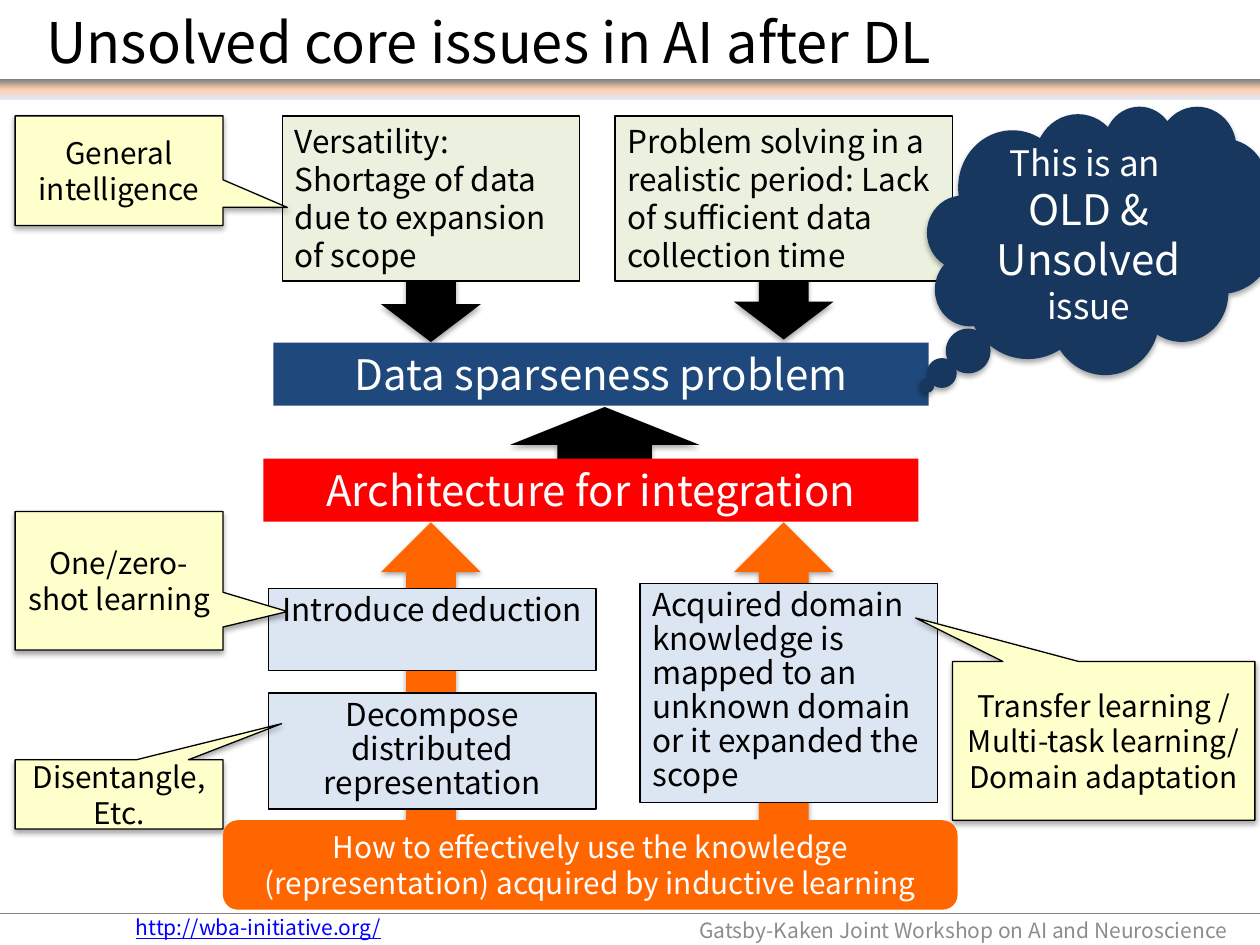
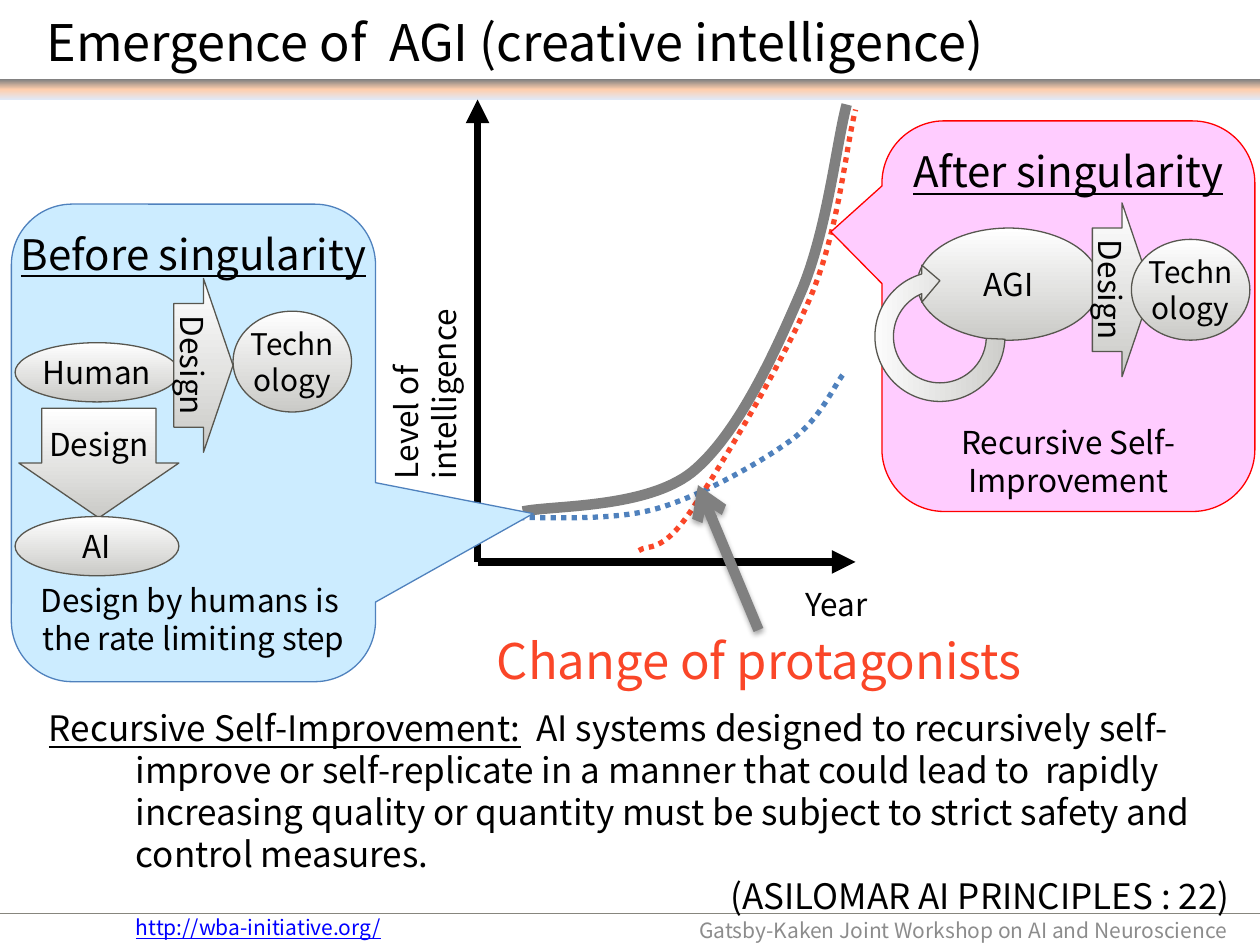
from lxml.etree import SubElement
from pptx import Presentation
from pptx.dml.color import RGBColor
from pptx.enum.dml import MSO_LINE
from pptx.enum.shapes import MSO_CONNECTOR, MSO_SHAPE
from pptx.enum.text import MSO_ANCHOR, PP_ALIGN
from pptx.oxml.ns import qn
from pptx.util import Pt

PX = 9144  # 100 px to the inch
FONT = "Noto Sans CJK JP"

BLACK = RGBColor(0x00, 0x00, 0x00)
WHITE = RGBColor(0xFF, 0xFF, 0xFF)
GRAY = RGBColor(0x80, 0x80, 0x80)
FOOTER_GRAY = RGBColor(0x8C, 0x8C, 0x8C)
FOOTER_LINE = RGBColor(0x87, 0x86, 0x7E)
LINK_BLUE = RGBColor(0x00, 0x00, 0xFF)
ORANGE = RGBColor(0xFF, 0x66, 0x00)
RED = RGBColor(0xFF, 0x00, 0x00)
TOMATO = RGBColor(0xFA, 0x46, 0x28)
NAVY = RGBColor(0x1F, 0x49, 0x7D)
CLOUD_NAVY = RGBColor(0x17, 0x37, 0x5E)
CURVE_BLUE = RGBColor(0x4F, 0x81, 0xBD)
PALE_GREEN = RGBColor(0xEB, 0xF1, 0xDE)
PALE_BLUE = RGBColor(0xDC, 0xE6, 0xF2)
PALE_YELLOW = RGBColor(0xFF, 0xFF, 0xCC)
SKY = RGBColor(0xCC, 0xEC, 0xFF)
PINK = RGBColor(0xFF, 0xCC, 0xFF)
METAL_LINE = RGBColor(0x57, 0x56, 0x4F)
METAL = [(0, WHITE), (100, RGBColor(0xCA, 0xCA, 0xC7))]
BAND = [(0, GRAY), (50, RGBColor(0xFF, 0xCE, 0xAC)),
        (100, RGBColor(0xE1, 0xE8, 0xF5))]


def write(shape, text, size=18, color=BLACK, align=PP_ALIGN.CENTER, underline=False,
          line_spacing=None, space_before=0, hanging=0):
    """Add one paragraph for each line of the text, and return the last."""
    frame = shape.text_frame
    for line in text.split("\n"):
        paragraph = frame.paragraphs[-1]
        if paragraph.runs:
            paragraph = frame.add_paragraph()
            paragraph.space_before = Pt(space_before)
        paragraph.alignment = align
        if line_spacing:
            paragraph.line_spacing = line_spacing
        if hanging:
            properties = paragraph._p.get_or_add_pPr()
            properties.set("marL", str(hanging * PX))
            properties.set("indent", str(-hanging * PX))
        run = paragraph.add_run()
        run.text = line
        run.font.name = FONT
        run.font.size = Pt(size)
        run.font.color.rgb = color
        run.font.underline = underline
    return paragraph


def set_gradient(shape, stops):
    """Fill from top to bottom with (percent, colour) stops."""
    shape.fill.gradient()
    shape.fill.gradient_angle = 270
    stop_list = shape._element.spPr.find(".//" + qn("a:gsLst"))
    for stop in list(stop_list):
        stop_list.remove(stop)
    for percent, color in stops:
        stop = SubElement(stop_list, qn("a:gs"), pos=str(percent * 1000))
        SubElement(stop, qn("a:srgbClr"), val=str(color))


def set_effects(shape, shadow):
    """Leave an empty effect list, or one soft shadow below the shape."""
    properties = shape._element.spPr
    effects = properties.find(qn("a:effectLst"))
    if effects is None:
        effects = SubElement(properties, qn("a:effectLst"))
    if shadow:
        outer = SubElement(effects, qn("a:outerShdw"), blurRad="40000", dist="23000",
                           dir="5400000", rotWithShape="0")
        color = SubElement(outer, qn("a:srgbClr"), val="000000")
        SubElement(color, qn("a:alpha"), val="35000")


class Deck:
    """Holds the shared style and the slide being filled."""

    def __init__(self):
        self.presentation = Presentation()
        self.presentation.slide_width = 1000 * PX
        self.presentation.slide_height = 750 * PX
        self.slide = None

    def new_slide(self):
        self.slide = self.presentation.slides.add_slide(self.presentation.slide_layouts[6])
        self.shape(MSO_SHAPE.RECTANGLE, (0, 63, 1000, 16), BAND)
        self.line((0, 725), (1000, 725), FOOTER_LINE, 1)
        self.text((98, 721, 224, 30), "http://wba-initiative.org/", wrap=False,
                  anchor=MSO_ANCHOR.TOP, size=12, color=LINK_BLUE,
                  align=PP_ALIGN.LEFT, underline=True)
        self.text((428, 726, 560, 24), "Gatsby-Kaken Joint Workshop on AI and Neuroscience ",
                  size=12, color=FOOTER_GRAY, align=PP_ALIGN.RIGHT)

    def title(self, text, size):
        self.text((27, 1, 882, 64), text, size=size, align=PP_ALIGN.LEFT)

    def set_frame(self, shape, anchor, wrap, margins=(10, 5)):
        frame = shape.text_frame
        frame.vertical_anchor = anchor
        frame.word_wrap = wrap
        frame.margin_left = frame.margin_right = margins[0] * PX
        frame.margin_top = frame.margin_bottom = margins[1] * PX

    def text(self, box, text="", anchor=MSO_ANCHOR.MIDDLE, wrap=True, rotation=0, **style):
        shape = self.slide.shapes.add_textbox(*(length * PX for length in box))
        shape.rotation = rotation
        self.set_frame(shape, anchor, wrap)
        if text:
            write(shape, text, **style)
        return shape

    def shape(self, kind, box, fill, line=None, text="", adjustments=(), rotation=0,
              shadow=False, anchor=MSO_ANCHOR.MIDDLE, wrap=True, margins=(10, 5), **style):
        shape = self.slide.shapes.add_shape(kind, *(length * PX for length in box))
        shape.rotation = rotation
        for index, value in enumerate(adjustments):
            shape.adjustments[index] = value
        if isinstance(fill, list):
            set_gradient(shape, fill)
        else:
            shape.fill.solid()
            shape.fill.fore_color.rgb = fill
        if line is None:
            shape.line.fill.background()
        else:
            shape.line.color.rgb = line
            shape.line.width = Pt(0.75)
        shape.shadow.inherit = False
        set_effects(shape, shadow)
        self.set_frame(shape, anchor, wrap, margins)
        if text:
            write(shape, text, **style)
        return shape

    def box(self, box, fill, text, line=BLACK, **style):
        self.shape(MSO_SHAPE.RECTANGLE, box, fill, line, text, anchor=MSO_ANCHOR.TOP, **style)

    def block_arrow(self, box, fill, rotation):
        self.shape(MSO_SHAPE.RIGHT_ARROW, box, fill, rotation=rotation, shadow=True)

    def note(self, box, tip, text):
        self.shape(MSO_SHAPE.RECTANGULAR_CALLOUT, box, PALE_YELLOW, BLACK, text,
                   adjustments=tip, shadow=True, size=17)

    def balloon(self, box, fill, line, tip, heading, **frame):
        return self.shape(MSO_SHAPE.ROUNDED_RECTANGULAR_CALLOUT, box, fill, line, heading,
                          adjustments=(*tip, 0.167), anchor=MSO_ANCHOR.TOP, size=24,
                          underline=True, **frame)

    def metal(self, kind, box, text="", wrap=False, **options):
        return self.shape(kind, box, METAL, METAL_LINE, text, wrap=wrap, **options)

    def design_arrow(self, left, top):
        shape = self.metal(MSO_SHAPE.RIGHT_ARROW, (left, top, 47, 138), "Design",
                           adjustments=(0.711, 0.5))
        shape.text_frame._txBody.bodyPr.set("vert", "vert")

    def technology(self, left, top):
        self.metal(MSO_SHAPE.OVAL, (left, top, 94, 80), "Technology", wrap=True,
                   margins=(0, 0), size=17)

    def line(self, start, end, color, width, head=None, shadow=False):
        connector = self.slide.shapes.add_connector(
            MSO_CONNECTOR.STRAIGHT, *(length * PX for length in (*start, *end)))
        connector.line.color.rgb = color
        connector.line.width = Pt(width)
        if head:
            SubElement(connector.line._get_or_add_ln(), qn("a:tailEnd"), type=head)
        set_effects(connector, shadow)

    def curve(self, points, color, width, dash=None):
        """Draw a start point followed by Bézier segments of three points each."""
        builder = self.slide.shapes.build_freeform(*points[0], scale=PX)
        builder.add_line_segments(points[1:], close=False)
        shape = builder.convert_to_shape()
        outline = shape._element.spPr.find(".//" + qn("a:path"))
        segments = outline.findall(qn("a:lnTo"))
        for index in range(0, len(segments), 3):
            bezier = SubElement(outline, qn("a:cubicBezTo"))
            for segment in segments[index:index + 3]:
                bezier.append(segment[0])
                outline.remove(segment)
        shape.fill.background()
        shape.line.color.rgb = color
        shape.line.width = Pt(width)
        if dash:
            shape.line.dash_style = dash
        shape.shadow.inherit = False


def build_issues(deck):
    deck.new_slide()
    # Block arrows behind the boxes
    deck.block_arrow((220, 497, 244, 79), ORANGE, 270)
    deck.block_arrow((492, 505, 260, 79), ORANGE, 270)
    deck.block_arrow((312, 202, 60, 79), BLACK, 90)
    deck.block_arrow((592, 200, 60, 79), BLACK, 90)
    deck.title("Unsolved core issues in AI after DL", 32)

    # Causes and approaches
    left = PP_ALIGN.LEFT
    deck.box((224, 92, 236, 131), PALE_GREEN,
             "Versatility: Shortage of data due to expansion of scope", align=left)
    deck.box((488, 92, 268, 131), PALE_GREEN,
             "Problem solving in a realistic period: Lack of sufficient data collection time",
             align=left)
    deck.box((213, 467, 260, 65), PALE_BLUE, "Introduce deduction", line_spacing=0.9)
    deck.box((213, 550, 260, 92), PALE_BLUE, "Decompose distributed representation",
             line_spacing=0.9)
    deck.box((508, 463, 236, 174), PALE_BLUE,
             "Acquired domain knowledge is mapped to an unknown domain or it expanded the scope",
             align=left, line_spacing=0.9)
    deck.block_arrow((450, 278, 60, 150), BLACK, 270)

    # Notes
    deck.note((12, 92, 165, 87), (0.809, 0.335), "General intelligence")
    deck.note((756, 525, 240, 126), (-0.622, -0.774),
              "Transfer learning /\nMulti-task learning/ Domain adaptation")
    deck.note((12, 406, 165, 110), (0.81, 0.222), "One/zero-shot learning")
    deck.note((12, 603, 165, 55), (0.782, -1.021), "Disentangle,\nEtc.")

    # Main statements
    deck.box((217, 272, 520, 50), NAVY, "Data sparseness problem", line=None,
             size=24, color=WHITE)
    cloud = deck.shape(MSO_SHAPE.CLOUD_CALLOUT, (736, 84, 276, 213), CLOUD_NAVY,
                       adjustments=(-0.501, 0.542), shadow=True)
    for text, size in (("This is an ", 20), ("OLD & Unsolved", 24), ("issue", 20)):
        write(cloud, text, size=size, color=WHITE)
    deck.shape(MSO_SHAPE.ROUNDED_RECTANGLE, (177, 651, 583, 71), ORANGE,
               text="How to effectively use the knowledge (representation) "
                    "acquired by inductive learning", size=17, color=WHITE)
    deck.box((209, 364, 520, 50), RED, "Architecture for integration", line=None,
             size=24, color=WHITE)


def build_emergence(deck):
    deck.new_slide()
    # Intelligence over the years
    deck.curve([(415, 406), (437, 401), (512, 404), (549, 375), (586, 345), (616, 278),
                (637, 229), (657, 180), (664, 113), (672, 83)], GRAY, 6)
    deck.title("Emergence of  AGI (creative intelligence)", 28.8)
    origin = (379, 446)
    for axis_end in ((679, 446), (379, 79)):
        deck.line(origin, axis_end, BLACK, 4.5, head="triangle")
    deck.text((216, 249, 242, 40), "Level of\nintelligence", rotation=270,
              align=PP_ALIGN.LEFT)
    deck.text((627, 459, 74, 40), "Year", wrap=False)
    deck.curve([(412, 411), (430, 410), (484, 414), (520, 404), (556, 394), (602, 368),
                (627, 350), (652, 332), (661, 307), (670, 296)],
               CURVE_BLUE, 3, MSO_LINE.ROUND_DOT)
    deck.curve([(507, 437), (514, 432), (525, 440), (548, 406), (571, 372), (622, 287),
                (644, 234), (666, 181), (671, 118), (679, 87)],
               TOMATO, 3, MSO_LINE.ROUND_DOT)
    deck.text((330, 500, 545, 53), "Change of protagonists", size=28, color=TOMATO,
              line_spacing=0.9)

    # Before singularity
    before = deck.balloon((9, 162, 289, 379), SKY, CURVE_BLUE, (0.933, 0.148),
                          "Before singularity", wrap=False)
    write(before, "Design by humans is ", space_before=173)
    write(before, "the rate limiting step")
    deck.metal(MSO_SHAPE.OVAL, (12, 272, 130, 47), "Human")
    deck.metal(MSO_SHAPE.DOWN_ARROW, (15, 324, 127, 87), "Design", adjustments=(0.714, 0.5))
    deck.metal(MSO_SHAPE.OVAL, (12, 410, 130, 47), "AI")
    deck.design_arrow(138, 221)
    deck.technology(185, 247)

    # After singularity
    after = deck.balloon((700, 96, 296, 310), PINK, RED, (-0.637, -0.216),
                         "After singularity", margins=(4, 5))
    write(after, "Recursive Self-Improvement", space_before=130)
    deck.metal(MSO_SHAPE.OVAL, (728, 181, 145, 89), "AGI")
    deck.design_arrow(867, 161)
    deck.technology(898, 190)
    deck.metal(MSO_SHAPE.CIRCULAR_ARROW, (687, 208, 118, 118), rotation=270,
               adjustments=(0.125, 11.423, 204.577, 55.479, 0.125))
    deck.line((602, 500), (554, 385), GRAY, 6, head="arrow", shadow=True)

    # Quoted principle
    principle = deck.text((29, 556, 957, 178), anchor=MSO_ANCHOR.TOP)
    paragraph = write(principle, "Recursive Self-Improvement:", size=20, underline=True,
                      align=PP_ALIGN.LEFT, hanging=69)
    run = paragraph.add_run()
    run.text = ("  AI systems designed to recursively self-improve or self-replicate in a "
                "manner that could lead to  rapidly increasing quality or quantity must be "
                "subject to strict safety and control measures.")
    run.font.name = FONT
    run.font.size = Pt(20)
    run.font.color.rgb = BLACK
    write(principle, "(ASILOMAR AI PRINCIPLES : 22)", size=20, align=PP_ALIGN.RIGHT)


def main():
    deck = Deck()
    build_issues(deck)
    build_emergence(deck)
    deck.presentation.save("out.pptx")


if __name__ == "__main__":
    main()
